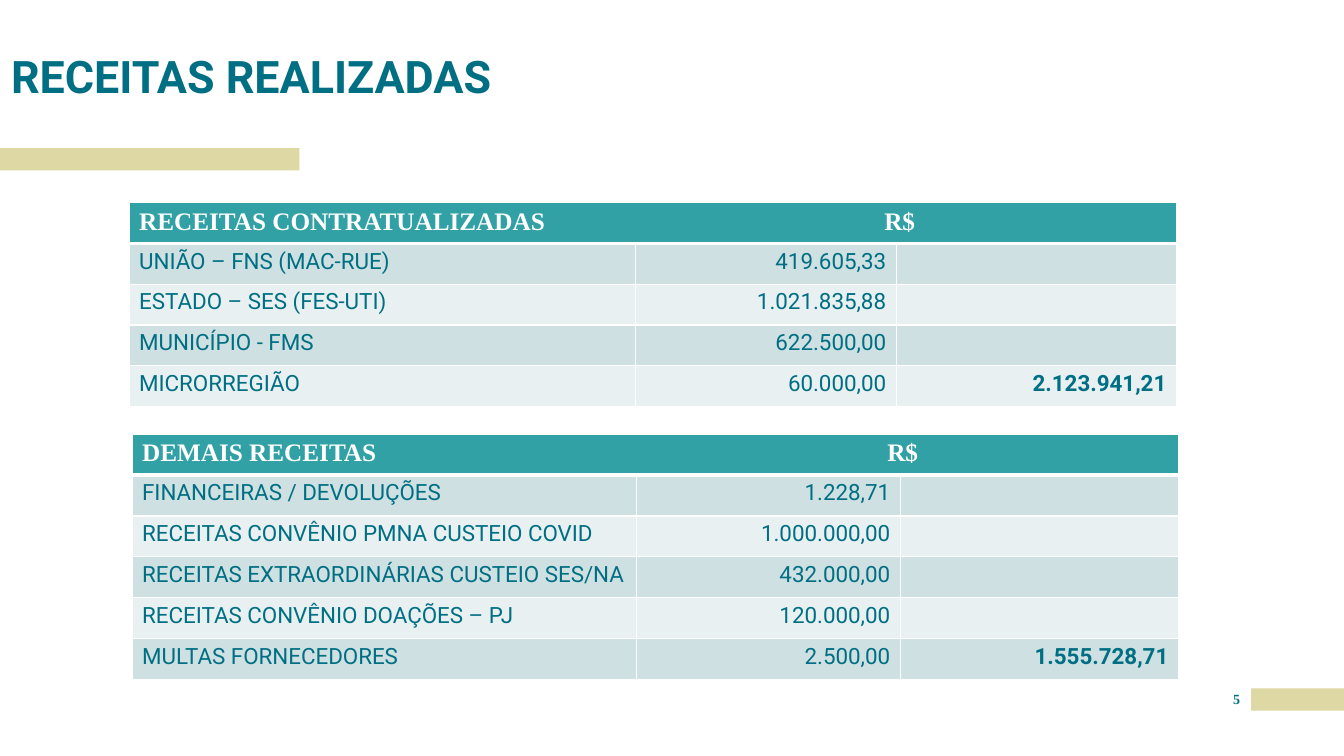
from dataclasses import dataclass

from lxml.etree import SubElement
from pptx import Presentation
from pptx.dml.color import RGBColor
from pptx.enum.shapes import MSO_SHAPE
from pptx.enum.text import MSO_ANCHOR, PP_ALIGN
from pptx.oxml.ns import qn
from pptx.slide import Slide
from pptx.table import _Cell
from pptx.text.text import TextFrame, _Paragraph
from pptx.util import Inches, Pt

WHITE = RGBColor(0xFF, 0xFF, 0xFF)
SAND = RGBColor(0xDE, 0xD8, 0xA4)
PETROL = RGBColor(0x00, 0x6F, 0x83)
TEAL = RGBColor(0x32, 0xA1, 0xA6)
BANDS = (RGBColor(0xCE, 0xE0, 0xE1), RGBColor(0xE8, 0xF0, 0xF1))
SANS = "Roboto"
SERIF = "Times New Roman"
ROW_HEIGHT = 0.405
CURRENCY_TAB = 7.39


@dataclass
class Bar:
    left: float
    top: float
    width: float
    height: float = 0.22


@dataclass
class RevenueTable:
    heading: str
    left: float
    top: float
    column_widths: tuple[float, ...]
    entries: tuple[tuple[str, str], ...]
    total: str


BARS = (Bar(12.41, 6.83, 0.92), Bar(0, 1.47, 2.97))
TABLES = (
    RevenueTable(
        "RECEITAS CONTRATUALIZADAS", 1.28, 2.01, (5.02, 2.59, 2.78),
        (
            ("UNIÃO – FNS (MAC-RUE)", "419.605,33"),
            ("ESTADO – SES (FES-UTI)", "1.021.835,88"),
            ("MUNICÍPIO - FMS", "622.500,00"),
            ("MICRORREGIÃO", "60.000,00"),
        ),
        "2.123.941,21",
    ),
    RevenueTable(
        "DEMAIS RECEITAS", 1.31, 4.31, (5, 2.62, 2.76),
        (
            ("FINANCEIRAS / DEVOLUÇÕES", "1.228,71"),
            ("RECEITAS CONVÊNIO PMNA CUSTEIO COVID", "1.000.000,00"),
            ("RECEITAS EXTRAORDINÁRIAS CUSTEIO SES/NA", "432.000,00"),
            ("RECEITAS CONVÊNIO DOAÇÕES – PJ", "120.000,00"),
            ("MULTAS FORNECEDORES", "2.500,00"),
        ),
        "1.555.728,71",
    ),
)


def add_run(paragraph: _Paragraph, text: str, size: float, font_name: str,
            color: RGBColor, bold: bool = False) -> None:
    run = paragraph.add_run()
    run.text = text
    run.font.size = Pt(size)
    run.font.name = font_name
    run.font.bold = bold
    run.font.color.rgb = color


def clear_margins(frame: TextFrame) -> None:
    frame.margin_left = frame.margin_right = 0
    frame.margin_top = frame.margin_bottom = 0
    frame.word_wrap = True


def add_bar(slide: Slide, bar: Bar) -> None:
    shape = slide.shapes.add_shape(
        MSO_SHAPE.RECTANGLE, Inches(bar.left), Inches(bar.top),
        Inches(bar.width), Inches(bar.height))
    shape.shadow.inherit = False
    shape.fill.solid()
    shape.fill.fore_color.rgb = SAND
    shape.line.fill.background()


def format_cell(cell: _Cell, fill: RGBColor, top: float = 1, bottom: float = 1) -> None:
    """Give the cell white borders, with widths in points, and a solid fill."""
    properties = cell._tc.get_or_add_tcPr()
    for side, width in (("L", 1), ("R", 1), ("T", top), ("B", bottom)):
        line = SubElement(properties, qn(f"a:ln{side}"), w=str(Pt(width)))
        solid = SubElement(line, qn("a:solidFill"))
        SubElement(solid, qn("a:srgbClr"), val=str(WHITE))
    cell.fill.solid()
    cell.fill.fore_color.rgb = fill


def add_tab_stop(paragraph: _Paragraph, position: float) -> None:
    tabs = SubElement(paragraph._p.get_or_add_pPr(), qn("a:tabLst"))
    SubElement(tabs, qn("a:tab"), pos=str(Inches(position)), algn="l")


def add_revenue_table(slide: Slide, revenue: RevenueTable) -> None:
    row_count = len(revenue.entries) + 1
    table = slide.shapes.add_table(
        row_count, 3, Inches(revenue.left), Inches(revenue.top),
        Inches(sum(revenue.column_widths)), Inches(ROW_HEIGHT * row_count)).table
    table.horz_banding = False
    for column, width in zip(table.columns, revenue.column_widths):
        column.width = Inches(width)

    for cell in table.rows[0].cells:
        format_cell(cell, TEAL, bottom=3)
    heading_cell = table.cell(0, 0)
    heading_cell.merge(table.cell(0, 2))
    heading = heading_cell.text_frame.paragraphs[0]
    add_tab_stop(heading, CURRENCY_TAB)
    for text in (revenue.heading, "\tR$"):
        add_run(heading, text, 18, SERIF, WHITE, bold=True)

    for row, (label, amount) in enumerate(revenue.entries, start=1):
        total = revenue.total if row == len(revenue.entries) else ""
        for column, text in enumerate((label, amount, total)):
            cell = table.cell(row, column)
            format_cell(cell, BANDS[(row - 1) % 2], top=3 if row == 1 else 1)
            paragraph = cell.text_frame.paragraphs[0]
            if column > 0:
                paragraph.alignment = PP_ALIGN.RIGHT
            if text:
                add_run(paragraph, text, 16, SANS, PETROL, bold=column == 2)


def add_title(slide: Slide, text: str) -> None:
    title = slide.shapes.title
    title.left, title.top = Inches(0.11), Inches(0)
    title.width, title.height = Inches(9.34), Inches(1.02)
    frame = title.text_frame
    clear_margins(frame)
    frame.vertical_anchor = MSO_ANCHOR.BOTTOM
    paragraph = frame.paragraphs[0]
    paragraph.alignment = PP_ALIGN.LEFT
    paragraph.line_spacing = 0.9
    add_run(paragraph, text, 32, SANS, PETROL, bold=True)


def add_page_number(slide: Slide, number: str) -> None:
    box = slide.shapes.add_textbox(
        Inches(12.12), Inches(6.85), Inches(0.29), Inches(0.25))
    clear_margins(box.text_frame)
    paragraph = box.text_frame.paragraphs[0]
    paragraph.alignment = PP_ALIGN.CENTER
    add_run(paragraph, number, 10, SERIF, PETROL, bold=True)


def main() -> None:
    presentation = Presentation()
    presentation.slide_width = Inches(13.33)
    presentation.slide_height = Inches(7.5)
    slide = presentation.slides.add_slide(presentation.slide_layouts[5])
    for bar in BARS:
        add_bar(slide, bar)
    add_title(slide, "RECEITAS REALIZADAS")
    add_page_number(slide, "5")
    for revenue in TABLES:
        add_revenue_table(slide, revenue)
    presentation.save("out.pptx")


if __name__ == "__main__":
    main()
